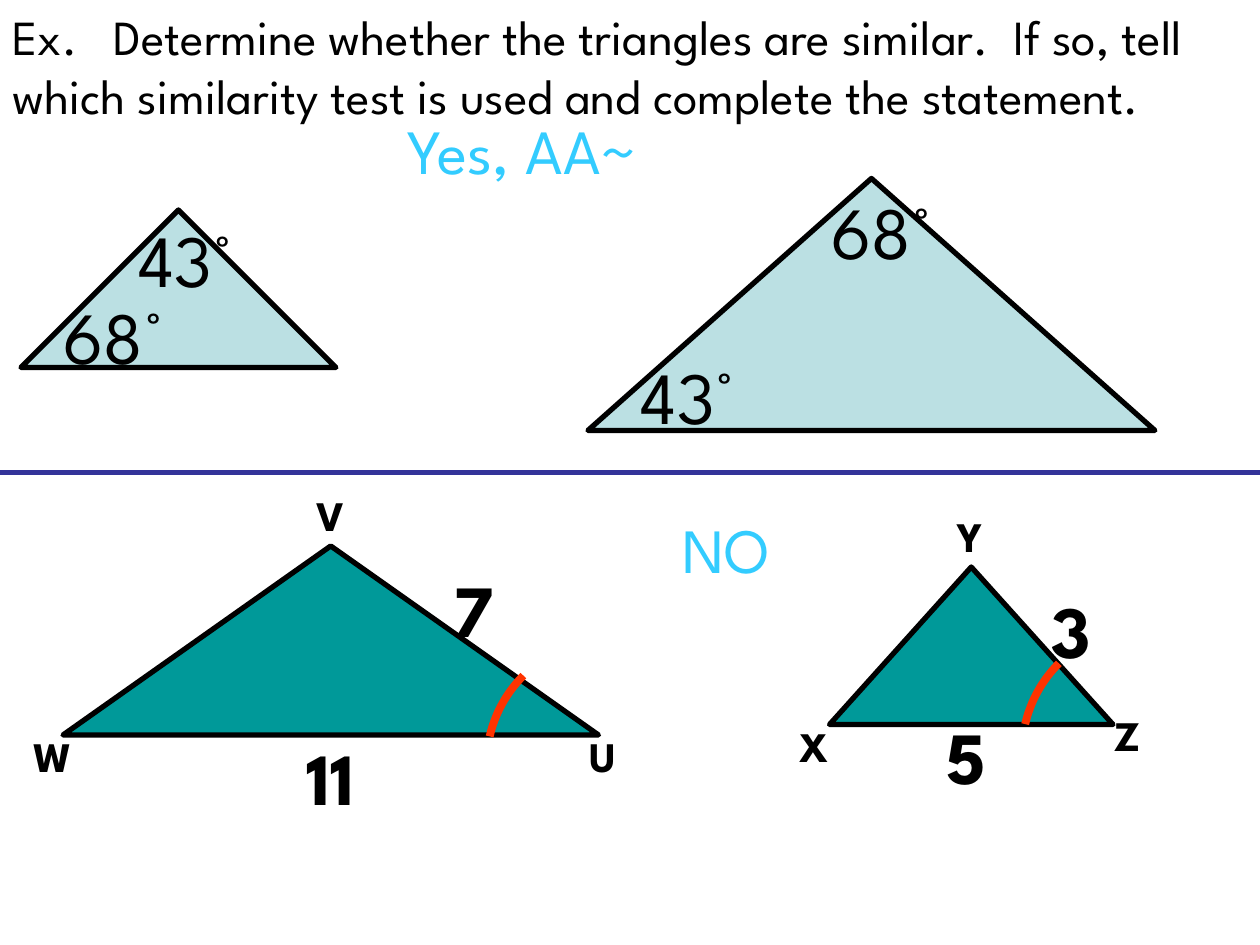
from math import cos, radians, sin

from lxml.etree import SubElement
from pptx import Presentation
from pptx.dml.color import RGBColor
from pptx.enum.shapes import MSO_CONNECTOR as Link, MSO_SHAPE as Shape
from pptx.enum.text import MSO_AUTO_SIZE as Fit, PP_ALIGN as Align
from pptx.oxml.ns import qn
from pptx.util import Pt

FONT = "League Spartan"
BLACK = RGBColor(0x00, 0x00, 0x00)
PALE = RGBColor(0xBB, 0xE0, 0xE3)
TEAL = RGBColor(0x00, 0x99, 0x99)
NAVY = RGBColor(0x33, 0x33, 0x99)
SKY = RGBColor(0x33, 0xCC, 0xFF)
RED = RGBColor(0xFF, 0x33, 0x00)

TASK = ("Ex.   Determine whether the triangles are similar.  If so, tell "
        "which similarity test is used and complete the statement.")
ANGLES = [("43°", 72, 119, 90), ("43°", 359, 197, 110),
          ("68°", 29, 163, 110), ("68°", 468, 103, 110)]
SIDES = [("7", 252, 319, 54), ("11", 168, 415, 78),
         ("5", 534, 403, 54), ("3", 594, 331, 54)]
NAMES = [("W", 12, 414, 37), ("V", 174, 276, 32), ("U", 330, 414, 30),
         ("X", 450, 408, 32), ("Y", 540, 288, 30), ("Z", 630, 402, 27)]


def add_text(slide, text, box, size, color=BLACK, bold=False, wrap=True,
             align=Align.LEFT, fit=Fit.SHAPE_TO_FIT_TEXT):
    frame = slide.shapes.add_textbox(*map(Pt, box)).text_frame
    frame.word_wrap = wrap
    frame.auto_size = fit
    para = frame.paragraphs[0]
    para.alignment = align
    run = para.add_run()
    run.text = text
    font = run.font
    font.name, font.size, font.bold = FONT, Pt(size), bold
    font.color.rgb = color


def add_answer(slide, text, box):
    add_text(slide, text, box, 36, SKY, wrap=False, align=Align.CENTER,
             fit=Fit.NONE)


def set_line(line, color, width):
    line.color.rgb = color
    line.width = Pt(width)


def add_triangle(slide, box, color):
    shape = slide.shapes.add_shape(Shape.ISOSCELES_TRIANGLE, *map(Pt, box))
    shape.shadow.inherit = False
    shape.fill.solid()
    shape.fill.fore_color.rgb = color
    set_line(shape.line, BLACK, 3)


def add_rule(slide, y, width):
    rule = slide.shapes.add_connector(Link.STRAIGHT, 0, Pt(y), Pt(width), Pt(y))
    set_line(rule.line, NAVY, 3)
    SubElement(rule._element.spPr, qn("a:effectLst"))


def add_arc(slide, x, y, radius=72, start=193, end=225):
    turns = [radians(deg) for deg in range(start, end + 1, 2)]
    spots = [(Pt(x + radius * cos(turn)), Pt(y + radius * sin(turn)))
             for turn in turns]
    path = slide.shapes.build_freeform(*spots[0])
    path.add_line_segments(spots[1:], close=False)
    arc = path.convert_to_shape()
    arc.shadow.inherit = False
    arc.fill.background()
    set_line(arc.line, RED, 4.5)


def main():
    """Build the similar triangles exercise."""
    deck = Presentation()
    deck.slide_width, deck.slide_height = Pt(720), Pt(540)
    slide = deck.slides.add_slide(deck.slide_layouts[6])

    add_text(slide, TASK, (0, 0, 708, 109), 28)
    add_triangle(slide, (12, 120, 180, 90), PALE)
    add_triangle(slide, (336, 102, 324, 144), PALE)
    for text, x, y, width in ANGLES:
        add_text(slide, text, (x, y, width, 58), 42)
    add_rule(slide, 270, 720)

    add_triangle(slide, (36, 312, 306, 108), TEAL)
    add_triangle(slide, (474, 324, 162, 90), TEAL)
    for text, x, y, width in NAMES:
        add_text(slide, text, (x, y, width, 36), 24, bold=True, wrap=False)
    for text, x, y, width in SIDES:
        add_text(slide, text, (x, y, width, 58), 42, bold=True)

    add_answer(slide, "Yes, AA~", (150, 60, 297, 116))
    add_answer(slide, "NO", (300, 288, 230, 60))
    for x, y in [(350, 437), (656, 430)]:
        add_arc(slide, x, y)

    deck.save("out.pptx")


if __name__ == "__main__":
    main()
